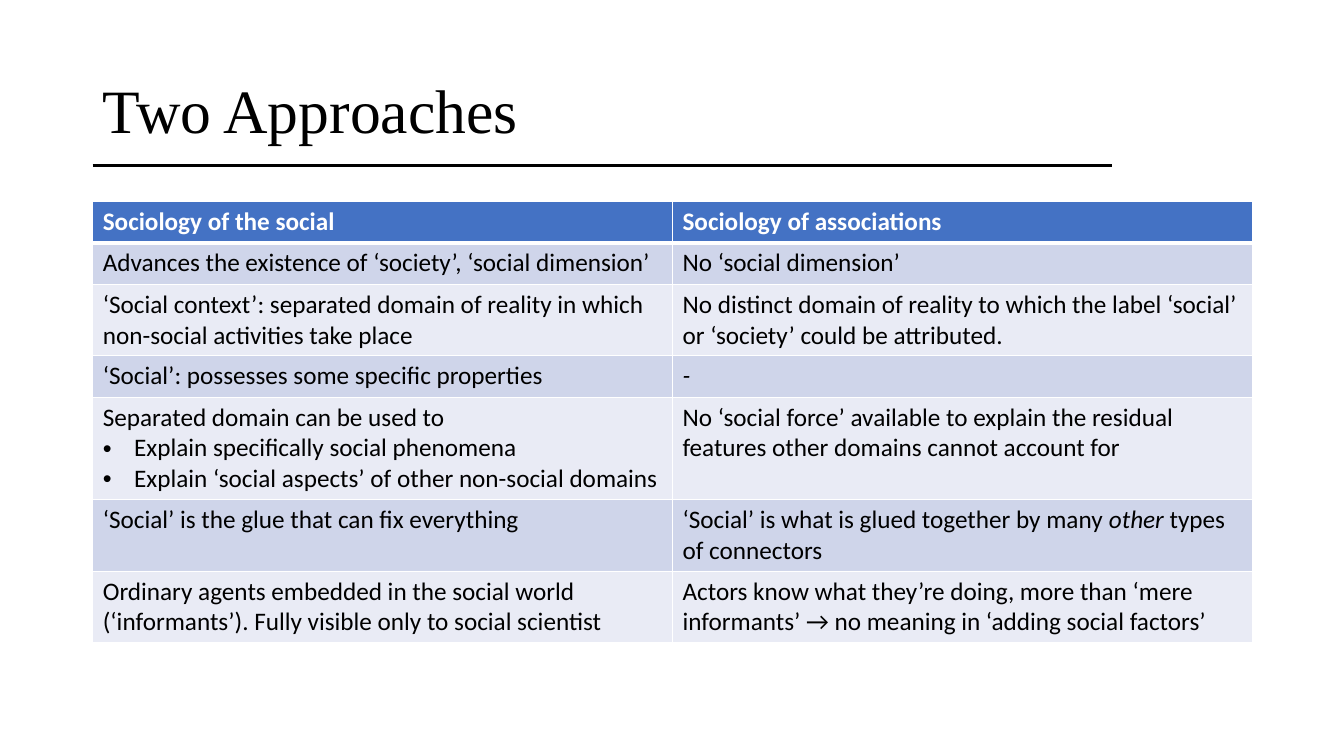
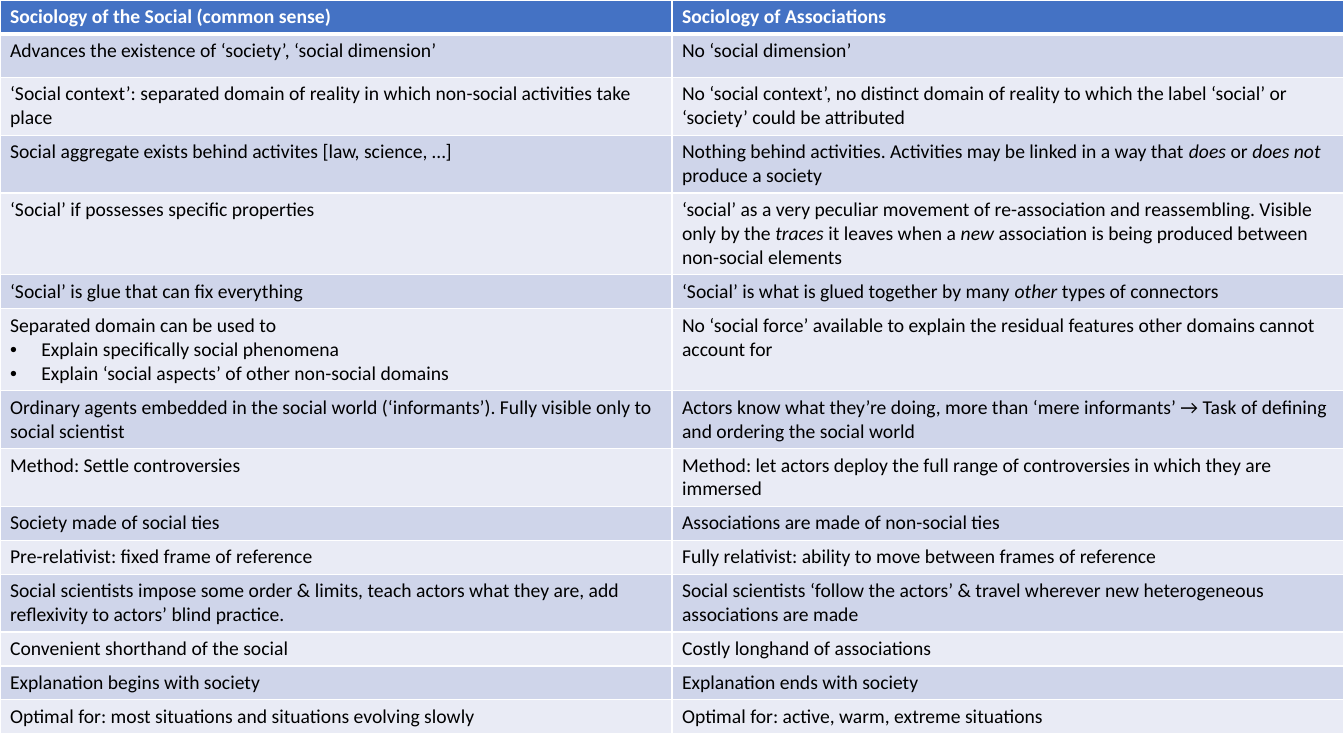
import dataclasses

import lxml.etree
import pptx
import pptx.dml.color
import pptx.enum.shapes
import pptx.enum.text
import pptx.oxml.ns
import pptx.util

Inches = pptx.util.Inches
Pt = pptx.util.Pt
qn = pptx.oxml.ns.qn
rgb = pptx.dml.color.RGBColor.from_string


@dataclasses.dataclass(frozen=True)
class Theme:
    ink: str = "000000"
    paper: str = "FFFFFF"
    header: str = "4472C4"
    bands: tuple = ("E9EBF5", "CFD5EA")
    title_font: str = "Times New Roman"
    body_font: str = "Calibri"
    title_size: int = 44
    large_size: int = 18
    small_size: int = 14


theme = Theme()


def add_border(cell, side, width):
    border = lxml.etree.SubElement(cell._tc.get_or_add_tcPr(), qn(f"a:ln{side}"), w=str(Pt(width)))
    fill = lxml.etree.SubElement(border, qn("a:solidFill"))
    lxml.etree.SubElement(fill, qn("a:srgbClr"), val=theme.paper)


def write_cell(cell, text, size, color, bold):
    frame = cell.text_frame
    for index, line in enumerate(text.split("\n")):
        paragraph = frame.add_paragraph() if index else frame.paragraphs[0]
        if line.startswith("• "):
            line = line[2:]
            properties = paragraph._p.get_or_add_pPr()
            properties.set("marL", str(Inches(0.31)))
            properties.set("indent", str(-Inches(0.31)))
            lxml.etree.SubElement(properties, qn("a:buFont"), typeface="Arial")
            lxml.etree.SubElement(properties, qn("a:buChar"), char="•")
        for part, words in enumerate(line.split("*")):
            if words:
                run = paragraph.add_run()
                run.text = words
                run.font.name = theme.body_font
                run.font.size = Pt(size)
                run.font.bold = bold
                run.font.italic = part % 2 == 1
                run.font.color.rgb = rgb(color)


domain_uses = (
    "Separated domain can be used to\n"
    "• Explain specifically social phenomena\n"
    "• Explain ‘social aspects’ of other non-social domains"
)
no_social_force = "No ‘social force’ available to explain the residual features other domains cannot account for"
society_exists = "Advances the existence of ‘society’, ‘social dimension’"
social_context = "‘Social context’: separated domain of reality in which non-social activities take place"
glued_together = "‘Social’ is what is glued together by many *other* types of connectors"
ordinary_agents = (
    "Ordinary agents embedded in the social world (‘informants’). "
    "Fully visible only to social scientist"
)

approaches = [
    (0.41, "Sociology of the social", "Sociology of associations"),
    (0.41, society_exists, "No ‘social dimension’"),
    (0.41, social_context,
     "No distinct domain of reality to which the label ‘social’ or ‘society’ could be attributed."),
    (0.41, "‘Social’: possesses some specific properties", "*-*"),
    (0.41, domain_uses, no_social_force),
    (0.41, "‘Social’ is the glue that can fix everything", glued_together),
    (0.41, ordinary_agents,
     "Actors know what they’re doing, more than ‘mere informants’ → "
     "no meaning in ‘adding social factors’"),
]

detailed_approaches = [
    (0.25, "Sociology of the Social (common sense)", "Sociology of Associations"),
    (0.43, society_exists, "No ‘social dimension’"),
    (0.43, social_context,
     "No ‘social context’, no distinct domain of reality to which the label ‘social’ "
     "or ‘society’ could be attributed"),
    (0.43, "Social aggregate exists behind activites [law, science, …]",
     "Nothing behind activities. Activities may be linked in a way that "
     "*does *or *does not* produce a society"),
    (0.61, "‘Social’ if possesses specific properties",
     "‘social’ as a very peculiar movement of re-association and reassembling. "
     "Visible only by the *traces* it leaves when a *new* association is being produced "
     "between non-social elements"),
    (0.34, "‘Social’ is glue that can fix everything", glued_together),
    (0.61, domain_uses, no_social_force),
    (0.43, ordinary_agents,
     "Actors know what they’re doing, more than ‘mere informants’ → "
     "Task of defining and ordering the social world"),
    (0.43, "Method: Settle controversies",
     "Method: let actors deploy the full range of controversies in which they are immersed"),
    (0.26, "Society made of social ties", "Associations are made of non-social ties"),
    (0.26, "Pre-relativist: fixed frame of reference",
     "Fully relativist: ability to move between frames of reference"),
    (0.43, "Social scientists impose some order & limits, teach actors what they are, "
     "add reflexivity to actors’ blind practice.",
     "Social scientists ‘follow the actors’ & travel wherever new heterogeneous "
     "associations are made"),
    (0.33, "Convenient shorthand of the social", "Costly longhand of associations"),
    (0.33, "Explanation begins with society", "Explanation ends with society"),
    (0.33, "Optimal for: most situations and situations evolving slowly",
     "Optimal for: active, warm, extreme situations"),
]

prs = pptx.Presentation()
prs.slide_width = Inches(13.33)
prs.slide_height = Inches(7.5)

overview = prs.slides.add_slide(prs.slide_layouts.get_by_name("Title Only"))
details = prs.slides.add_slide(prs.slide_layouts.get_by_name("Blank"))

title_rule = overview.shapes.add_connector(
    pptx.enum.shapes.MSO_CONNECTOR.STRAIGHT, Inches(0.92), Inches(1.64), Inches(11.03), Inches(1.64)
)
title_rule.line.color.rgb = rgb(theme.ink)
title_rule.line.width = Pt(2.25)
lxml.etree.SubElement(title_rule.element.spPr, qn("a:effectLst"))
prs.slide_master.shapes.element.append(title_rule.element)

heading = overview.shapes.title
heading.left, heading.top = Inches(0.92), Inches(0.4)
heading.width, heading.height = Inches(11.5), Inches(1.45)
heading.text_frame.auto_size = pptx.enum.text.MSO_AUTO_SIZE.NONE
heading.text_frame.vertical_anchor = pptx.enum.text.MSO_ANCHOR.MIDDLE
heading_line = heading.text_frame.paragraphs[0]
heading_line.alignment = pptx.enum.text.PP_ALIGN.LEFT
heading_line.line_spacing = 0.9
heading_run = heading_line.add_run()
heading_run.text = "Two Approaches"
heading_run.font.name = theme.title_font
heading_run.font.size = Pt(theme.title_size)
heading_run.font.color.rgb = rgb(theme.ink)

comparisons = [
    (overview, approaches, 0.92, 2, 11.5, theme.large_size),
    (details, detailed_approaches, 0, 0, 13.33, theme.small_size),
]
for slide, rows, left, top, width, size in comparisons:
    total_height = sum(row[0] for row in rows)
    comparison = slide.shapes.add_table(
        len(rows), 2, Inches(left), Inches(top), Inches(width), Inches(total_height)
    ).table
    for row_index, (height, *texts) in enumerate(rows):
        comparison.rows[row_index].height = Inches(height)
        is_header = row_index == 0
        for column_index, text in enumerate(texts):
            cell = comparison.cell(row_index, column_index)
            add_border(cell, "L", 1)
            add_border(cell, "R", 1)
            add_border(cell, "T", 3 if row_index == 1 else 1)
            add_border(cell, "B", 3 if is_header else 1)
            cell.fill.solid()
            cell.fill.fore_color.rgb = rgb(theme.header if is_header else theme.bands[row_index % 2])
            write_cell(cell, text, size, theme.paper if is_header else theme.ink, is_header)

prs.save("out.pptx")
